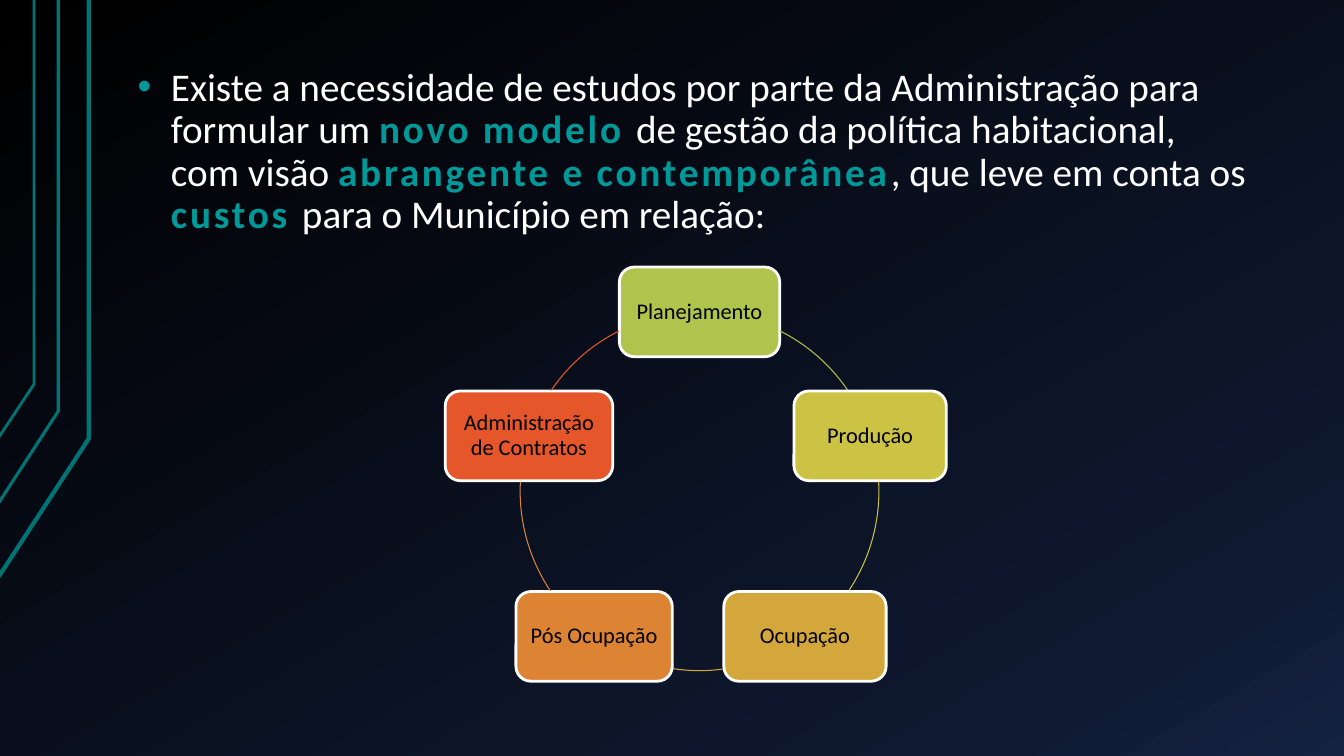
import copy
import math
import pptx
import pptx.util
import pptx.dml.color
import pptx.enum.shapes
import pptx.enum.text
import pptx.oxml
import pptx.oxml.ns

Cm, Pt = pptx.util.Cm, pptx.util.Pt
RGBColor = pptx.dml.color.RGBColor
MSO_SHAPE = pptx.enum.shapes.MSO_SHAPE
qn = pptx.oxml.ns.qn

WHITE = RGBColor(0xFF, 0xFF, 0xFF)
BLACK = RGBColor(0x00, 0x00, 0x00)
NAVY = RGBColor(0x0F, 0x19, 0x31)
BLUE = RGBColor(0x14, 0x22, 0x42)
TEAL = RGBColor(0x00, 0x99, 0x99)
DARK_TEAL = RGBColor(0x00, 0x73, 0x73)
GREEN = RGBColor(0xAF, 0xC3, 0x4D)
YELLOW = RGBColor(0xCC, 0xC3, 0x44)
GOLD = RGBColor(0xD4, 0xA7, 0x3C)
ORANGE = RGBColor(0xDD, 0x83, 0x34)
RED = RGBColor(0xE5, 0x57, 0x2B)


def add_run(p, text, size, color):
    r = p.add_run()
    r.text = text
    r.font.name = "Calibri"
    r.font.size = Pt(size)
    r.font.color.rgb = color
    return r


def set_outline(sp, color, width):
    sp.shadow.inherit = False
    sp.line.color.rgb = color
    sp.line.width = Pt(width)


prs = pptx.Presentation()
prs.slide_width, prs.slide_height = Cm(33.87), Cm(19.05)
s = prs.slides.add_slide(prs.slide_layouts[6])

# Background gradient with three stops
fill = s.background.fill
fill.gradient()
fill.gradient_angle = 300
stops = s._element.find(".//" + qn("a:gsLst"))
stops.append(copy.deepcopy(stops[-1]))
for stop, position, color in zip(fill.gradient_stops, (0, 0.85, 1), (BLACK, NAVY, BLUE)):
    stop.position = position
    stop.color.rgb = color

# Bent lines on the left edge: x, height of the bend, height at the edge, width
for x, bend, end, width in [(2.24, 11.05, 14.53, 3), (1.47, 10.36, 12.67, 2.25),
                            (0.86, 9.68, 11.02, 2)]:
    builder = s.shapes.build_freeform(Cm(-0.03), Cm(end))
    builder.add_line_segments([(Cm(x), Cm(bend)), (Cm(x), 0)], close=False)
    sp = builder.convert_to_shape()
    sp.fill.background()
    set_outline(sp, DARK_TEAL, width)

# Bulleted statement
tf = s.shapes.add_textbox(Cm(3.14), Cm(1.52), Cm(28.65), Cm(5.59)).text_frame
tf.word_wrap = True
tf.margin_left = tf.margin_right = Cm(0.33)
tf.margin_top = tf.margin_bottom = Cm(0.18)
p = tf.paragraphs[0]
p.line_spacing = 0.9
p.space_before = Pt(16)
pPr = p._p.get_or_add_pPr()
pPr.set("marL", str(Cm(0.84)))
pPr.set("indent", str(Cm(-0.84)))
bullet_color = pptx.oxml.parse_xml(
    '<a:buClr xmlns:a="http://schemas.openxmlformats.org/drawingml/2006/main">'
    f'<a:srgbClr val="{TEAL}"/></a:buClr>')
pPr.append(bullet_color)
pPr.append(pPr.makeelement(qn("a:buFont"), {"typeface": "Arial"}))
pPr.append(pPr.makeelement(qn("a:buChar"), {"char": "•"}))
for text, key in [
    ("Existe a necessidade de estudos por parte da Administração para formular um ", False),
    ("novo modelo ", True),
    ("de gestão da política habitacional, com visão ", False),
    ("abrangente e contemporânea", True),
    (", que leve em conta os ", False),
    ("custos ", True),
    ("para o Município em relação:", False),
]:
    r = add_run(p, text, 28, TEAL if key else WHITE)
    r.font.bold = key
    if key:
        r._r.get_or_add_rPr().set("spc", "200")

# Cycle: boxes every 72 degrees from the top, each followed by an arc
CX, CY, RADIUS, BOX_H = 17.63, 12.38, 4.52, 2.26
stages = [
    ("Planejamento", 4.04, GREEN, 296.7, 325.8),
    ("Produção", 3.84, YELLOW, 357.1, 33.8),
    ("Ocupação", 4.09, GOLD, 82.6, 98.7),
    ("Pós Ocupação", 3.94, ORANGE, 146.2, 182.9),
    ("Administração de Contratos", 4.22, RED, 214.2, 243.3),
]
for i, (label, width, color, start, end) in enumerate(stages):
    angle = math.radians(72 * i - 90)
    x = CX + RADIUS * math.cos(angle)
    y = CY + RADIUS * math.sin(angle)
    sp = s.shapes.add_shape(MSO_SHAPE.ROUNDED_RECTANGLE, Cm(x - width / 2),
                            Cm(y - BOX_H / 2), Cm(width), Cm(BOX_H))
    sp.fill.solid()
    sp.fill.fore_color.rgb = color
    set_outline(sp, WHITE, 2)
    tf = sp.text_frame
    tf.word_wrap = True
    tf.vertical_anchor = pptx.enum.text.MSO_ANCHOR.MIDDLE
    tf.margin_left = tf.margin_right = tf.margin_top = tf.margin_bottom = Cm(0.18)
    p = tf.paragraphs[0]
    p.alignment = pptx.enum.text.PP_ALIGN.CENTER
    p.line_spacing = 0.9
    add_run(p, label, 16, BLACK)

    arc = s.shapes.add_shape(MSO_SHAPE.ARC, Cm(CX - RADIUS), Cm(CY - RADIUS),
                             Cm(2 * RADIUS), Cm(2 * RADIUS))
    # Arc angles are stored in 60000ths of a degree, adjustments in 100000ths
    arc.adjustments[0], arc.adjustments[1] = start * 0.6, end * 0.6
    arc.fill.background()
    set_outline(arc, color, 0.75)

prs.save("out.pptx")
